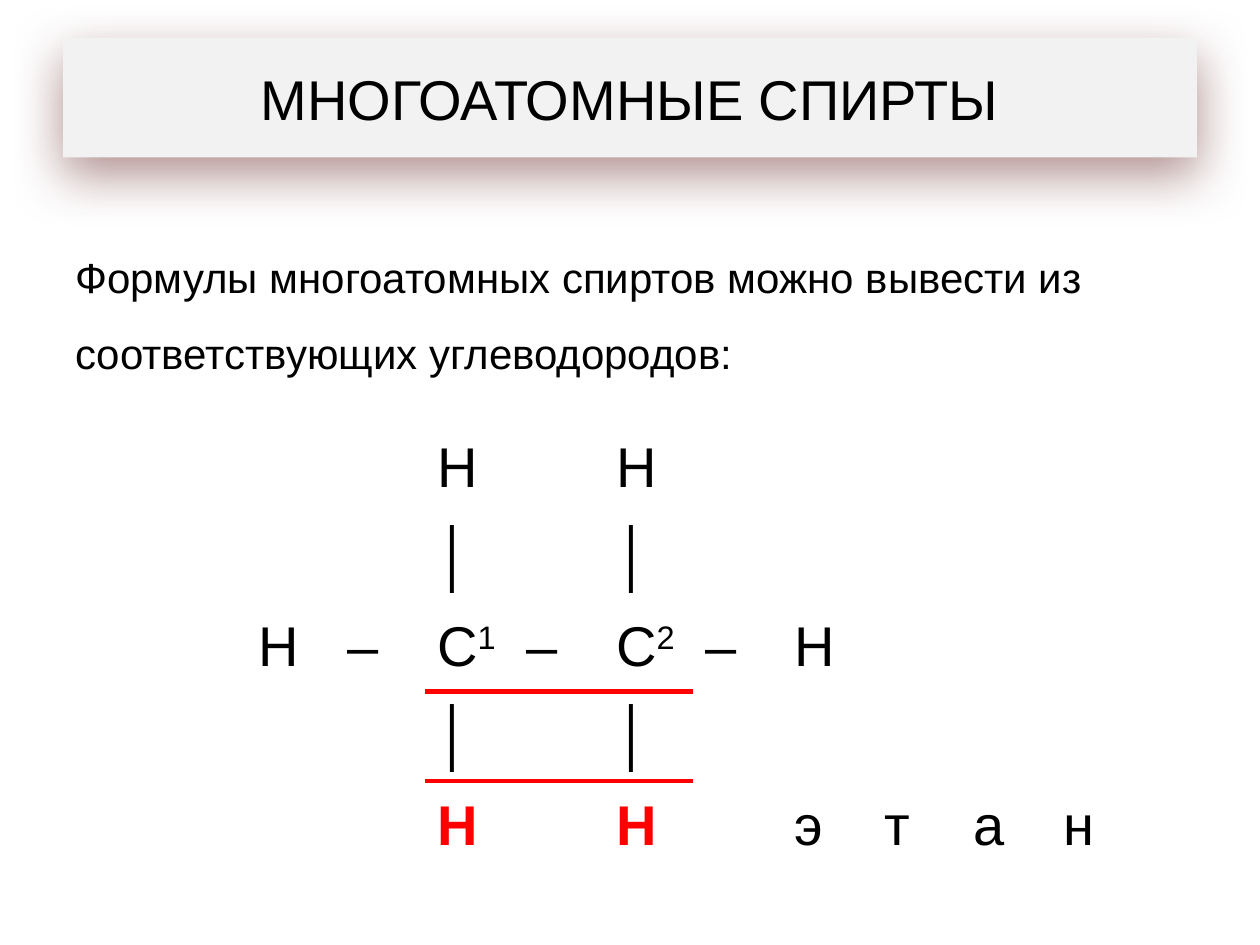
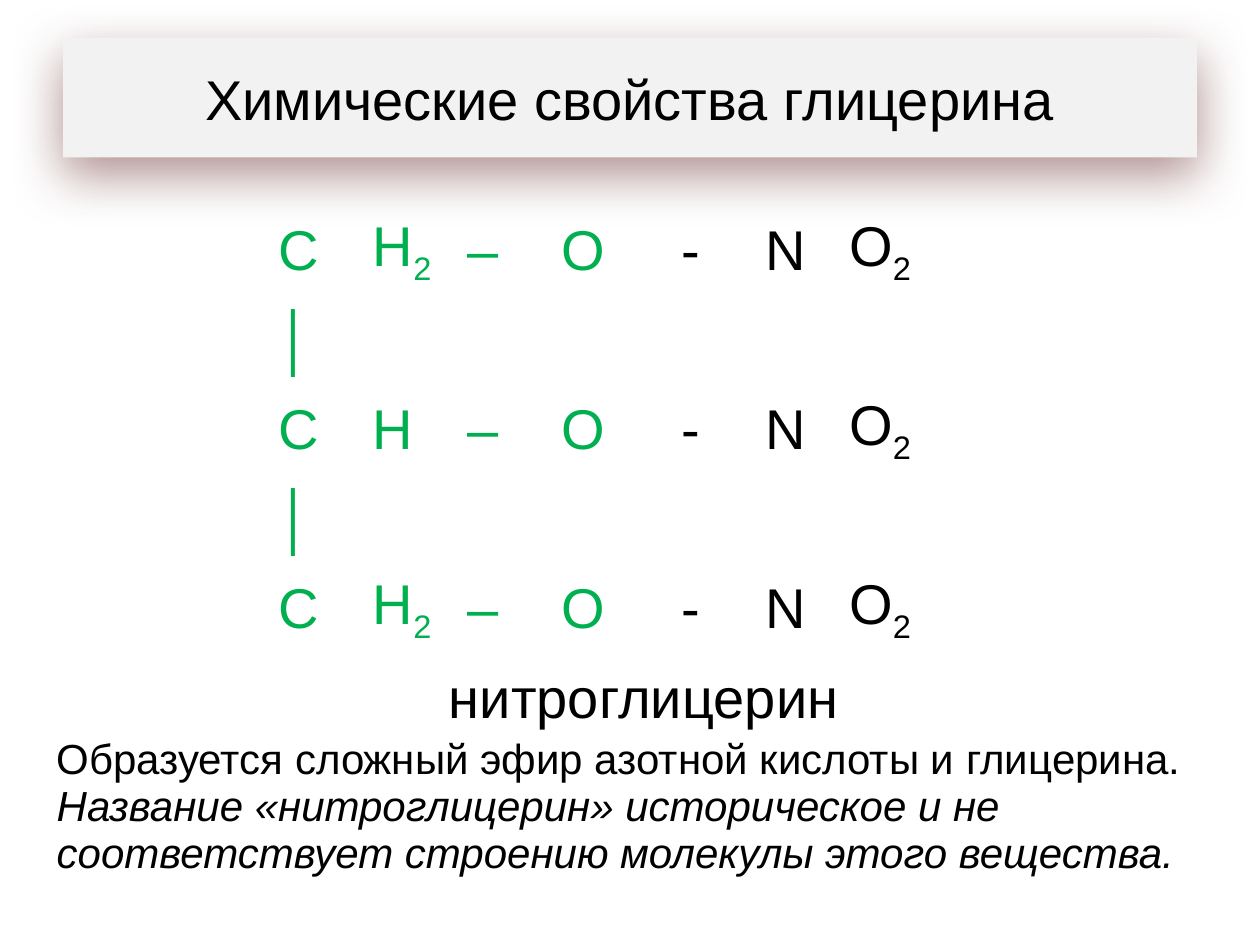
from dataclasses import dataclass

from lxml.etree import SubElement
from pptx import Presentation
from pptx.dml.color import RGBColor
from pptx.enum.text import MSO_ANCHOR, PP_ALIGN
from pptx.oxml import parse_xml
from pptx.oxml.ns import nsdecls, qn
from pptx.slide import Slide
from pptx.table import Table, _Cell
from pptx.text.text import _Paragraph
from pptx.util import Pt

EMU_PER_PX = 9144  # 100 px to the inch
TITLE_ONLY = 5
PLAIN_TABLE_STYLE = "{2D5ABB26-0587-4C30-8999-92F81FD0307C}"


@dataclass(frozen=True)
class Theme:
    font: str = "Arial"
    black: str = "000000"
    red: str = "FF0000"
    green: str = "00B050"
    band: str = "F2F2F2"
    shadow: str = "632523"
    large: int = 32
    body: int = 24
    rule: int = 3
    superscript: int = 30
    subscript: int = -25


THEME = Theme()


@dataclass(frozen=True)
class Box:
    left: int
    top: int
    width: int
    height: int

    def emu(self) -> tuple[int, ...]:
        return tuple(value * EMU_PER_PX
                     for value in (self.left, self.top, self.width, self.height))


@dataclass(frozen=True)
class Atom:
    """One formula cell; a digit after a letter is raised or lowered."""
    row: int
    column: int
    text: str
    color: str = THEME.black
    bold: bool = False
    align: PP_ALIGN = PP_ALIGN.LEFT


TITLE_BOX = Box(50, 30, 900, 95)
INTRO_BOX = Box(50, 175, 900, 208)
ETHANE_BOX = Box(195, 336, 710, 355)
ESTER_BOX = Box(211, 164, 600, 426)
NOTE_BOX = Box(35, 578, 930, 125)


# Text
def add_run(paragraph: _Paragraph, text: str, size: int,
            color: str = THEME.black, baseline: int = 0, **extra: bool) -> None:
    run = paragraph.add_run()
    run.text = text
    formats = {"name": THEME.font, "size": Pt(size), **extra}
    for name, value in formats.items():
        setattr(run.font, name, value)
    run.font.color.rgb = RGBColor.from_string(color)
    if baseline:
        run.font._element.set("baseline", str(baseline * 1000))


# Title band
def add_titled_slide(presentation: Presentation, text: str) -> Slide:
    slide = presentation.slides.add_slide(presentation.slide_layouts[TITLE_ONLY])
    title = slide.shapes.title
    for name, value in zip(("left", "top", "width", "height"), TITLE_BOX.emu()):
        setattr(title, name, value)
    title.fill.solid()
    title.fill.fore_color.rgb = RGBColor.from_string(THEME.band)
    title._element.spPr.append(parse_xml(
        f'<a:effectLst {nsdecls("a")}><a:outerShdw blurRad="{Pt(30)}" '
        f'dist="{Pt(10)}" dir="5400000" algn="ctr" rotWithShape="0">'
        f'<a:srgbClr val="{THEME.shadow}"><a:alpha val="50000"/></a:srgbClr>'
        '</a:outerShdw></a:effectLst>'))
    title.text_frame.vertical_anchor = MSO_ANCHOR.MIDDLE
    paragraph = title.text_frame.paragraphs[0]
    paragraph.alignment = PP_ALIGN.CENTER
    add_run(paragraph, text, THEME.large)
    return slide


# Tables
def add_plain_table(slide: Slide, box: Box, rows: int, columns: int) -> Table:
    table = slide.shapes.add_table(rows, columns, *box.emu()).table
    table.first_row = table.horz_banding = False
    table._tbl.tblPr.find(qn("a:tableStyleId")).text = PLAIN_TABLE_STYLE
    for cell in table.iter_cells():
        cell.fill.background()
        cell.vertical_anchor = MSO_ANCHOR.MIDDLE
    return table


def add_border(cell: _Cell, side: str) -> None:
    properties = cell._tc.get_or_add_tcPr()
    line = SubElement(properties, qn(f"a:ln{side}"), w=str(Pt(THEME.rule)))
    fill = SubElement(line, qn("a:solidFill"))
    SubElement(fill, qn("a:srgbClr"), val=THEME.red)
    properties.insert(0, line)  # borders precede the fill


def write_atoms(table: Table, atoms: list[Atom], digit_baseline: int) -> None:
    for atom in atoms:
        paragraph = table.cell(atom.row, atom.column).text_frame.paragraphs[0]
        paragraph.alignment = atom.align
        symbol = atom.text.rstrip("0123456789")
        digits = atom.text[len(symbol):]
        add_run(paragraph, symbol, THEME.large, atom.color, bold=atom.bold)
        if digits:
            add_run(paragraph, digits, THEME.large, atom.color, digit_baseline)


# Slide 1: ethane
def build_ethane_slide(presentation: Presentation) -> None:
    slide = add_titled_slide(presentation, "МНОГОАТОМНЫЕ СПИРТЫ")
    frame = slide.shapes.add_textbox(*INTRO_BOX.emu()).text_frame
    frame.word_wrap = True
    frame.paragraphs[0].line_spacing = 1.5
    add_run(frame.paragraphs[0], "Формулы многоатомных спиртов можно вывести из "
            "соответствующих углеводородов:", THEME.body)

    chain = ["H", "–", "C1", "–", "C2", "–", "H"]
    atoms = [Atom(2, column, text) for column, text in enumerate(chain)]
    for column in (2, 4):
        atoms += [Atom(0, column, "H"), Atom(1, column, "│"), Atom(3, column, "│"),
                  Atom(4, column, "H", THEME.red, bold=True)]
    atoms += [Atom(4, column, letter) for column, letter in enumerate("этан", 6)]
    table = add_plain_table(slide, ETHANE_BOX, 5, 10)
    write_atoms(table, atoms, THEME.superscript)

    # Red rule under the carbon pair
    for column in (2, 3, 4):
        add_border(table.cell(2, column), "B")
        add_border(table.cell(3, column), "T")


# Slide 2: nitroglycerin
def build_ester_slide(presentation: Presentation) -> None:
    slide = add_titled_slide(presentation, "Химические свойства глицерина")
    atoms = [Atom(row, 0, "│", THEME.green) for row in (1, 3)]
    for row, hydrogen in ((0, "H2"), (2, "H"), (4, "H2")):
        glycerol = ["C", hydrogen, "–", "O"]
        nitrate = ["-", "N", "O2"]
        atoms += [Atom(row, column, text, THEME.green)
                  for column, text in enumerate(glycerol)]
        atoms += [Atom(row, column, text, align=PP_ALIGN.CENTER)
                  for column, text in enumerate(nitrate, len(glycerol))]
    atoms.append(Atom(5, 0, "нитроглицерин", align=PP_ALIGN.CENTER))
    table = add_plain_table(slide, ESTER_BOX, 6, 8)
    table.cell(5, 0).merge(table.cell(5, 7))
    write_atoms(table, atoms, THEME.subscript)

    # Explanation
    frame = add_plain_table(slide, NOTE_BOX, 1, 1).cell(0, 0).text_frame
    add_run(frame.paragraphs[0],
            "Образуется сложный эфир азотной кислоты и глицерина.", THEME.body)
    add_run(frame.add_paragraph(), "Название «нитроглицерин» историческое и не "
            "соответствует строению молекулы этого вещества.", THEME.body, italic=True)


def main() -> None:
    presentation = Presentation()
    presentation.slide_width = 1000 * EMU_PER_PX
    presentation.slide_height = 750 * EMU_PER_PX
    build_ethane_slide(presentation)
    build_ester_slide(presentation)
    presentation.save("out.pptx")


if __name__ == "__main__":
    main()
